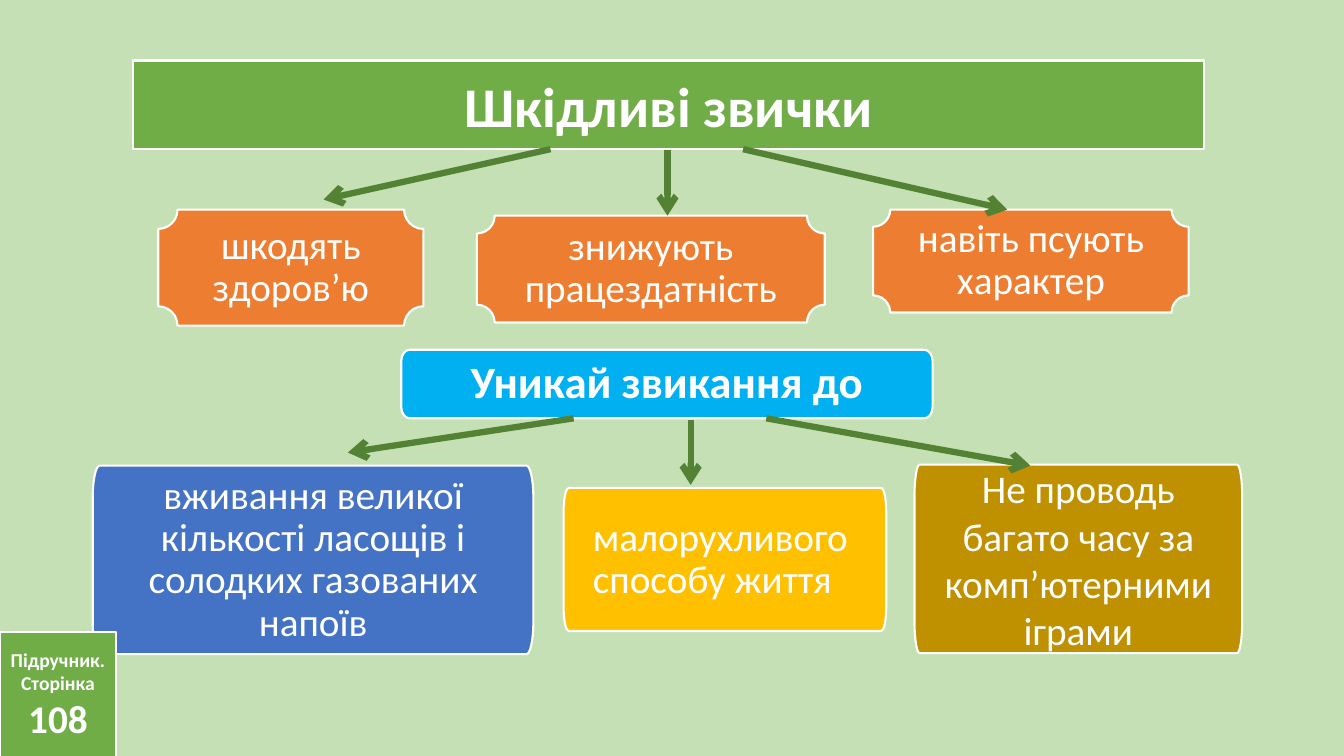
from lxml.etree import SubElement
from pptx import Presentation
from pptx.dml.color import RGBColor
from pptx.enum.shapes import MSO_CONNECTOR, MSO_SHAPE
from pptx.enum.text import MSO_ANCHOR, PP_ALIGN
from pptx.oxml.ns import qn
from pptx.util import Inches, Pt


class Theme:
    font = "Calibri"
    background = RGBColor.from_string("C5E0B4")
    white = RGBColor.from_string("FFFFFF")
    green = RGBColor.from_string("70AD47")
    arrow = RGBColor.from_string("548235")
    orange = RGBColor.from_string("ED7D31")
    sky = RGBColor.from_string("00B0F0")
    blue = RGBColor.from_string("4472C4")
    yellow = RGBColor.from_string("FFC000")
    ochre = RGBColor.from_string("BF9000")
    title, subtitle, body, label = Pt(40), Pt(32), Pt(28), Pt(14)
    outline, arrow_width = Pt(1.5), Pt(4.5)


def fill_panel(panel, color, lines, bold=False, align=PP_ALIGN.CENTER, spacing=None):
    """Style a panel and write its (text, size) lines."""
    panel.shadow.inherit = False
    panel.fill.solid()
    panel.fill.fore_color.rgb = color
    panel.line.color.rgb = Theme.white
    panel.line.width = Theme.outline
    frame = panel.text_frame
    frame.word_wrap = True
    frame.vertical_anchor = MSO_ANCHOR.MIDDLE
    for index, (text, size) in enumerate(lines):
        paragraph = frame.add_paragraph() if index else frame.paragraphs[0]
        paragraph.alignment = align
        paragraph.line_spacing = spacing
        run = paragraph.add_run()
        run.text = text
        run.font.name = Theme.font
        run.font.size = size
        run.font.bold = bold
        run.font.color.rgb = Theme.white
    return frame


def set_insets(frame):
    frame.margin_left = frame.margin_right = Inches(0.29)
    frame.margin_top = frame.margin_bottom = Inches(0.03)


presentation = Presentation()
presentation.slide_width, presentation.slide_height = Inches(13.33), Inches(7.5)
slide = presentation.slides.add_slide(presentation.slide_layouts[6])
slide.background.fill.solid()
slide.background.fill.fore_color.rgb = Theme.background
shapes = slide.shapes

# Title bar
title_bar = shapes.add_shape(
    MSO_SHAPE.RECTANGLE, Inches(1.32), Inches(0.6), Inches(10.62), Inches(0.88))
fill_panel(title_bar, Theme.green, [("Шкідливі звички", Theme.title)], bold=True)

# Harms of bad habits
harms = [
    ("шкодять здоров’ю", 1.57, 2.08, 2.63, 1.15),
    ("знижують працездатність", 4.73, 2.14, 3.45, 1.06),
    ("навіть псують характер", 8.66, 2.08, 3.13, 1.02),
]
for text, *box in harms:
    plaque = shapes.add_shape(MSO_SHAPE.PLAQUE, *map(Inches, box))
    set_insets(fill_panel(plaque, Theme.orange, [(text, Theme.body)], spacing=0.9))

# Advice heading and habits to avoid: panels with stretched elliptical corners
center, left_aligned = PP_ALIGN.CENTER, PP_ALIGN.LEFT
advice = [
    ("Уникай звикання до", Theme.subtitle, True, center, 0.9, Theme.sky,
     3.98, 3.47, 5.27, 0.68),
    ("малорухливого способу життя", Theme.body, False, left_aligned, 0.9, Theme.yellow,
     5.59, 4.84, 3.2, 1.42),
    ("вживання великої кількості ласощів і солодких газованих напоїв", Theme.body,
     False, center, 0.9, Theme.blue, 0.92, 4.62, 4.37, 1.87),
    ("Не проводь багато часу за комп’ютерними іграми", Theme.body,
     False, center, None, Theme.ochre, 9.07, 4.61, 3.25, 1.87),
]
CURVE_PULL = 0.55  # how far each control point reaches towards the corner
for text, size, bold, align, spacing, color, *box in advice:
    left, top, width, height = map(Inches, box)
    radius_x, radius_y = width // 64, height // 6
    near_x, far_x = radius_x, width - radius_x
    near_y, far_y = radius_y, height - radius_y
    outline = [(0, near_y), (near_x, 0), (far_x, 0), (width, near_y),
               (width, far_y), (far_x, height), (near_x, height), (0, far_y)]
    corners = [(0, 0), (width, 0), (width, height), (0, height)]
    builder = shapes.build_freeform(left + outline[0][0], top + outline[0][1])
    builder.add_line_segments([(left + x, top + y) for x, y in outline[1:]], close=True)
    panel = builder.convert_to_shape()

    # Bend the segment that cuts each corner
    cuts = list(panel._element.iter(qn("a:lnTo")))[::2]
    for cut, corner, start, end in zip(cuts, corners, outline[::2], outline[1::2]):
        cut.tag = qn("a:cubicBezTo")
        for position, anchor in enumerate((start, end)):
            x, y = (round(a + CURVE_PULL * (c - a)) for a, c in zip(anchor, corner))
            control = SubElement(cut, qn("a:pt"), x=str(x), y=str(y))
            cut.insert(position, control)
    set_insets(fill_panel(panel, color, [(text, size)], bold, align, spacing))

# Arrows from each heading to its three panels
arrows = [
    (7.37, 1.48, 9.99, 2.08),
    (5.46, 1.48, 3.21, 1.98),
    (6.62, 1.49, 6.62, 2.14),
    (7.6, 4.15, 10.22, 4.62),
    (5.69, 4.15, 3.45, 4.49),
    (6.85, 4.17, 6.85, 4.81),
]
for ends in arrows:
    arrow = shapes.add_connector(MSO_CONNECTOR.STRAIGHT, *map(Inches, ends))
    arrow.line.color.rgb = Theme.arrow
    arrow.line.width = Theme.arrow_width
    SubElement(arrow.line._get_or_add_ln(), qn("a:tailEnd"), type="arrow")
    SubElement(arrow._element.spPr, qn("a:effectLst"))

# Textbook page badge
badge = shapes.add_shape(
    MSO_SHAPE.RECTANGLE, Inches(0), Inches(6.27), Inches(1.15), Inches(1.24))
fill_panel(badge, Theme.green, [
    ("Підручник.", Theme.label),
    ("Сторінка", Theme.label),
    ("108", Theme.body),
], bold=True)

presentation.save("out.pptx")
